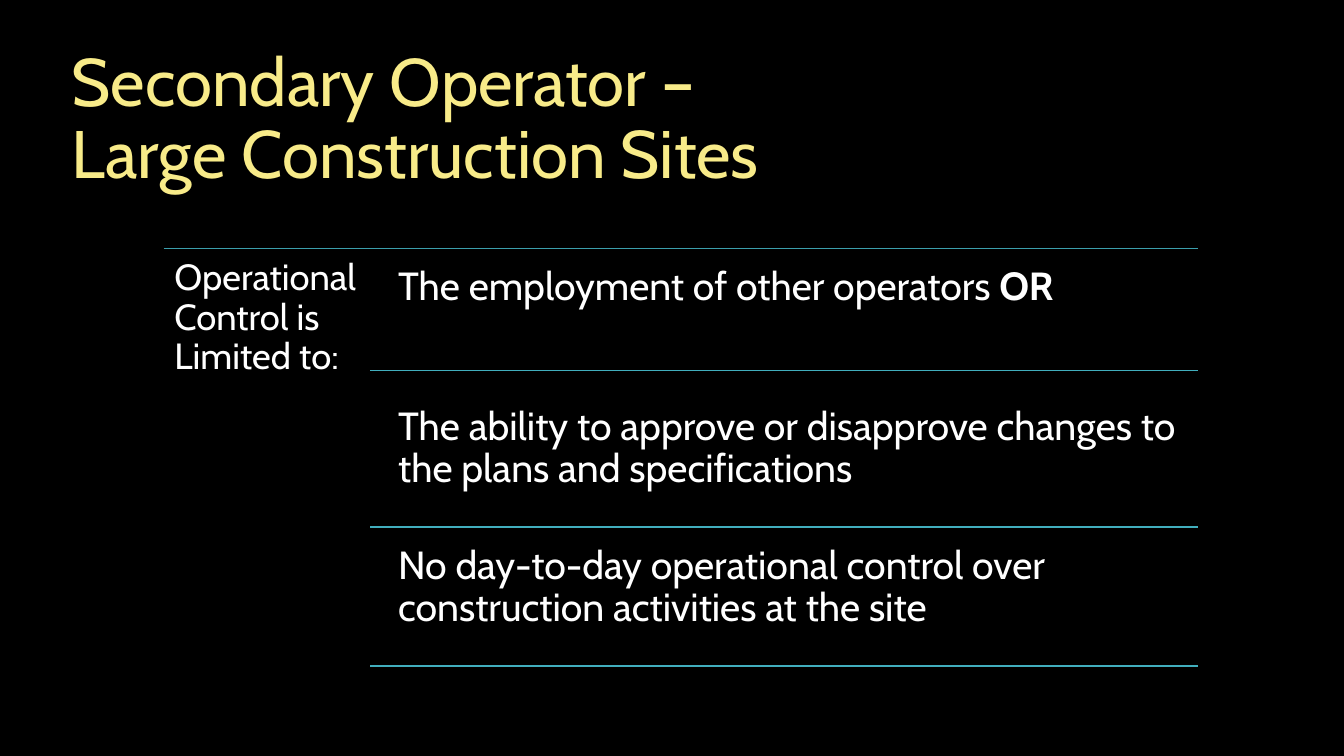
from lxml.etree import SubElement
from pptx import Presentation
from pptx.dml.color import RGBColor
from pptx.enum.shapes import MSO_CONNECTOR
from pptx.enum.text import MSO_ANCHOR, MSO_AUTO_SIZE, PP_ALIGN
from pptx.oxml.ns import qn
from pptx.util import Pt

COLORS = {
    "background": "000000",
    "title": "F8EB89",
    "text": "FFFFFF",
    "top rule": "3B9EAC",
    "item rule": "41AEBD",
}
FONT = "Cabin"
ITEM_HEIGHT = 95

# Item top and rule position below the top of the list, then plain and bold text
ITEMS = [
    (4.3, 87.1, "The employment of other operators ", "OR"),
    (104.4, 198.7, "The ability to approve or disapprove changes to the plans and specifications", ""),
    (203.8, 298.1, "No day-to-day operational control over construction activities at the site", ""),
]


def color(name):
    return RGBColor.from_string(COLORS[name])


def format_text(text_frame, size, color_name, margin):
    text_frame.word_wrap = True
    text_frame.auto_size = MSO_AUTO_SIZE.NONE
    text_frame.margin_left = text_frame.margin_right = Pt(margin)
    text_frame.margin_top = text_frame.margin_bottom = Pt(margin)
    for paragraph in text_frame.paragraphs:
        paragraph.alignment = PP_ALIGN.LEFT
        paragraph.line_spacing = 0.9
        for run in paragraph.runs:
            run.font.name = FONT
            run.font.size = Pt(size)
            run.font.color.rgb = color(color_name)


def add_title(slide, left, top, width, height):
    title = slide.shapes.title
    title.left, title.top, title.width, title.height = map(Pt, (left, top, width, height))
    title.text_frame.text = "Secondary Operator –\vLarge Construction Sites"
    title.text_frame.vertical_anchor = MSO_ANCHOR.MIDDLE
    format_text(title.text_frame, 48, "title", 7.2)


def add_text(slide, left, top, width, height, text, size, margin, bold_text=""):
    text_box = slide.shapes.add_textbox(Pt(left), Pt(top), Pt(width), Pt(height))
    text_frame = text_box.text_frame
    text_frame.text = text
    if bold_text:
        bold_run = text_frame.paragraphs[0].add_run()
        bold_run.text = bold_text
        bold_run.font.bold = True
    format_text(text_frame, size, "text", margin)


def add_rule(slide, left, right, y, color_name, weight):
    rule = slide.shapes.add_connector(
        MSO_CONNECTOR.STRAIGHT, Pt(left), Pt(y), Pt(right), Pt(y))
    rule.line.color.rgb = color(color_name)
    rule.line.width = Pt(weight)
    SubElement(rule._element.spPr, qn("a:effectLst"))


def add_limits_list(slide, left, top, width, height):
    """Place the heading at the left and the ruled items beside it."""
    right = left + width
    heading_width = width / 5
    rule_left = left + heading_width
    item_left = rule_left + 11.5

    add_rule(slide, left, right, top, "top rule", 0.5)
    add_text(slide, left, top, heading_width, height,
             "Operational Control is Limited to:", 26, 7.8)
    for item_top, rule_top, text, bold_text in ITEMS:
        add_text(slide, item_left, top + item_top, right - item_left, ITEM_HEIGHT,
                 text, 28, 8.4, bold_text)
        add_rule(slide, rule_left, right, top + rule_top, "item rule", 1)


def main():
    presentation = Presentation()
    presentation.slide_width, presentation.slide_height = Pt(960), Pt(540)
    slide = presentation.slides.add_slide(presentation.slide_layouts[5])
    slide.background.fill.solid()
    slide.background.fill.fore_color.rgb = color("background")
    add_title(slide, 44, 28, 756, 116.6)
    add_limits_list(slide, 116.8, 177.6, 738.6, 303)
    presentation.save("out.pptx")


if __name__ == "__main__":
    main()
